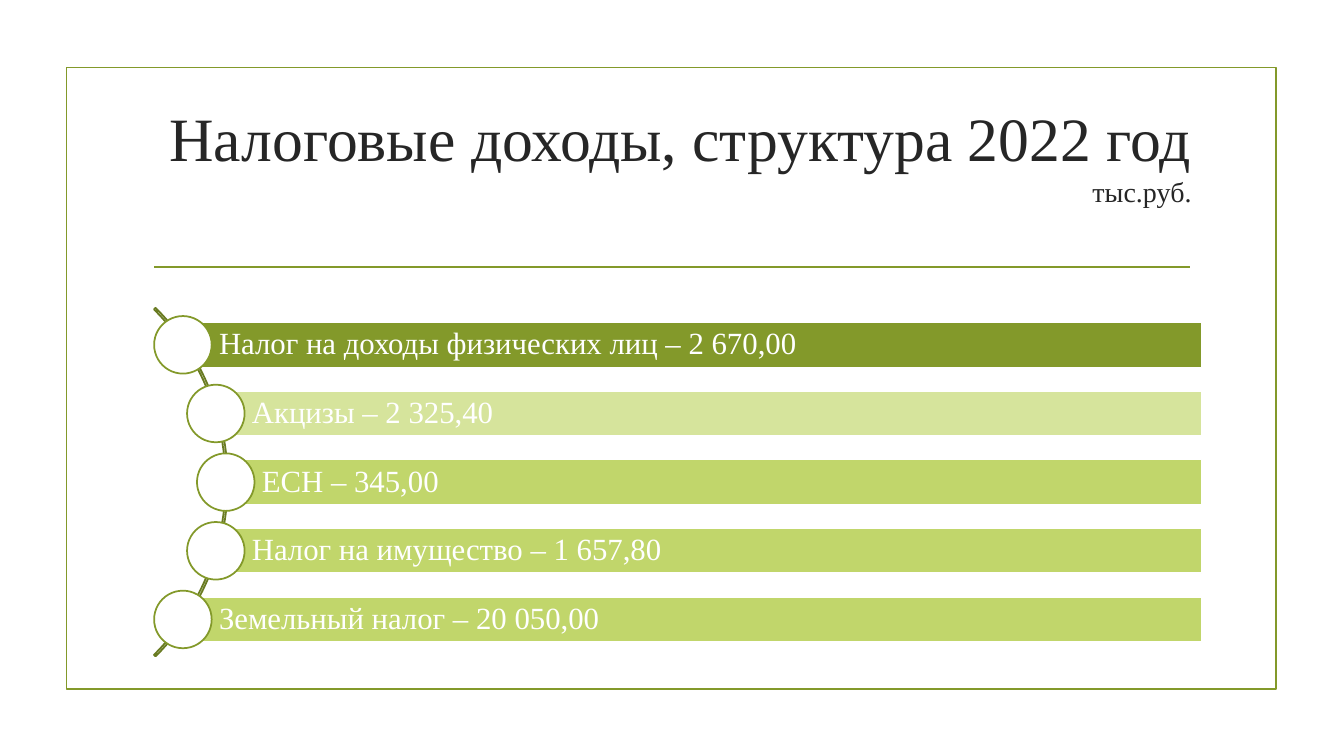
from pptx import Presentation
from pptx.dml.color import RGBColor
from pptx.enum.shapes import MSO_CONNECTOR, MSO_SHAPE
from pptx.enum.text import MSO_ANCHOR, PP_ALIGN
from pptx.oxml.ns import qn
from pptx.util import Cm, Pt
from lxml import etree

RECTANGLE, OVAL, BLOCK_ARC = MSO_SHAPE.RECTANGLE, MSO_SHAPE.OVAL, MSO_SHAPE.BLOCK_ARC
LEFT, RIGHT = PP_ALIGN.LEFT, PP_ALIGN.RIGHT
MIDDLE = MSO_ANCHOR.MIDDLE

OLIVE = RGBColor(0x83, 0x99, 0x2A)
DARK_OLIVE = RGBColor(0x69, 0x7B, 0x22)
PALE_GREEN = RGBColor(0xD6, 0xE4, 0x9C)
LIGHT_GREEN = RGBColor(0xC1, 0xD6, 0x6B)
WHITE = RGBColor(0xFF, 0xFF, 0xFF)
CHARCOAL = RGBColor(0x26, 0x26, 0x26)
LINE_WIDTH = Pt(1.25)

deck = Presentation()
deck.slide_width, deck.slide_height = Cm(33.87), Cm(19.05)
page = deck.slides.add_slide(deck.slide_layouts[6])


def add_outlined(kind, left, top, width, height, line, fill=None):
    shape = page.shapes.add_shape(kind, Cm(left), Cm(top), Cm(width), Cm(height))
    shape.shadow.inherit = False
    shape.line.color.rgb = line
    shape.line.width = LINE_WIDTH
    if fill is None:
        shape.fill.background()
    else:
        shape.fill.solid()
        shape.fill.fore_color.rgb = fill
    return shape


def add_span(para, text, size, color, align=LEFT, spacing=1.0):
    para.alignment = align
    para.line_spacing = spacing
    span = para.add_run()
    span.text = text
    span.font.name = "Times New Roman"
    span.font.size = Pt(size)
    span.font.color.rgb = color


# Page frame and rule under the title
add_outlined(RECTANGLE, 1.68, 1.7, 30.48, 15.67, OLIVE)
rule = page.shapes.add_connector(MSO_CONNECTOR.STRAIGHT, Cm(3.89), Cm(6.73), Cm(30), Cm(6.73))
rule.line.color.rgb = OLIVE
rule.line.width = LINE_WIDTH
etree.SubElement(rule._element.spPr, qn("a:effectLst"))

# Title with the unit on its second line
title = page.shapes.add_textbox(Cm(3.61), Cm(2.13), Cm(26.67), Cm(3.5)).text_frame
title.word_wrap = True
title.vertical_anchor = MIDDLE
heading = title.paragraphs[0]
add_span(heading, "Налоговые доходы, структура 2022 год", 44, CHARCOAL, align=RIGHT)
heading.add_line_break()
add_span(heading, "тыс.руб.", 20, CHARCOAL, align=RIGHT)

# Arc behind the circles, from 315 to 45 degrees
arc = add_outlined(BLOCK_ARC, -6.68, 5.94, 12.42, 12.42, DARK_OLIVE)
for index, value in enumerate((189, 27, 0.0045)):
    arc.adjustments[index] = value

# Tax bars, each with a circle centred on its left end
TAXES = [
    ("Налог на доходы физических лиц – 2 670,00", 4.61, OLIVE),
    ("Акцизы – 2 325,40", 5.44, PALE_GREEN),
    ("ЕСН – 345,00", 5.69, LIGHT_GREEN),
    ("Налог на имущество – 1 657,80", 5.44, LIGHT_GREEN),
    ("Земельный налог – 20 050,00", 4.61, LIGHT_GREEN),
]
BAR_RIGHT, BAR_HEIGHT = 30.28, 1.14
FIRST_MIDDLE, PITCH = 8.69, 1.73
DIAMETER = 1.45

for row, (label, left, color) in enumerate(TAXES):
    middle = FIRST_MIDDLE + row * PITCH
    bar = add_outlined(RECTANGLE, left, middle - BAR_HEIGHT / 2, BAR_RIGHT - left,
                       BAR_HEIGHT, WHITE, color)
    frame = bar.text_frame
    frame.word_wrap = True
    frame.vertical_anchor = MIDDLE
    frame.margin_left = Cm(0.91)
    frame.margin_top = frame.margin_right = frame.margin_bottom = Cm(0.15)
    add_span(frame.paragraphs[0], label, 22, WHITE, spacing=0.9)
    add_outlined(OVAL, left - DIAMETER / 2, middle - DIAMETER / 2, DIAMETER, DIAMETER,
                 OLIVE, WHITE)

deck.save("out.pptx")
